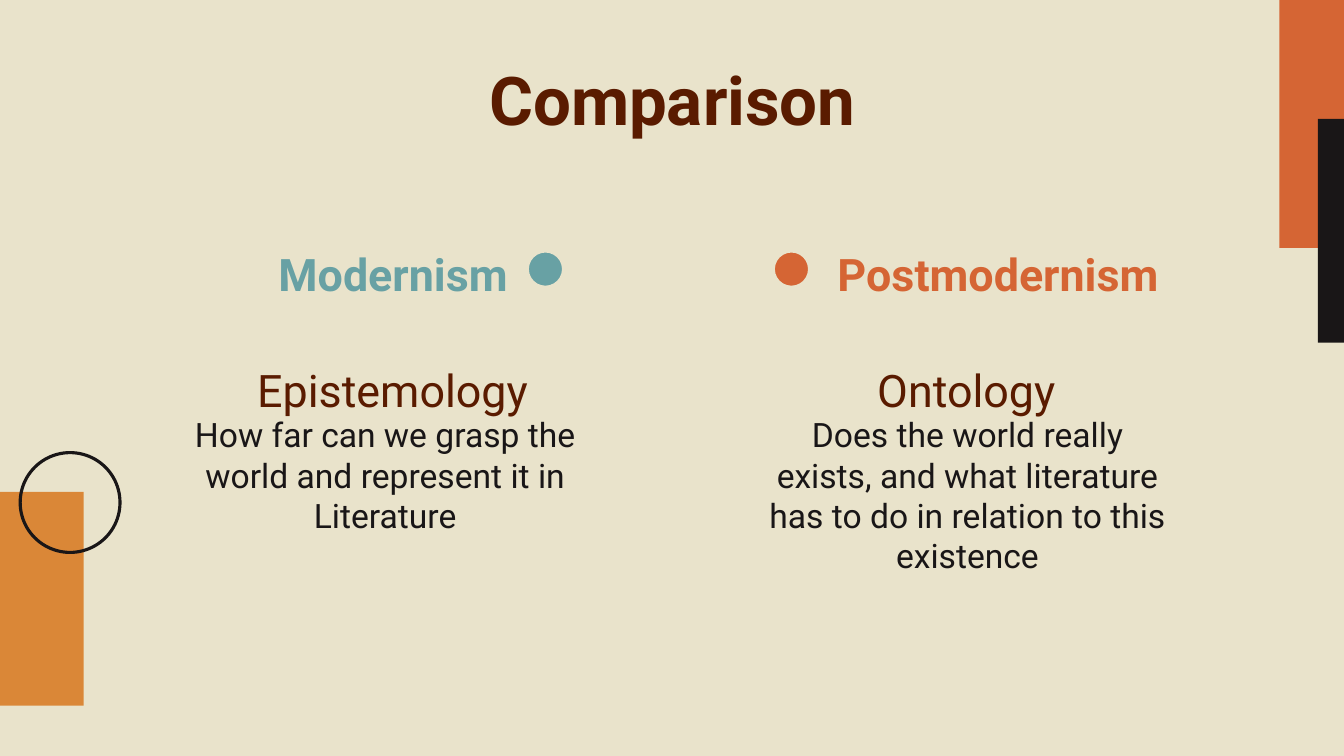
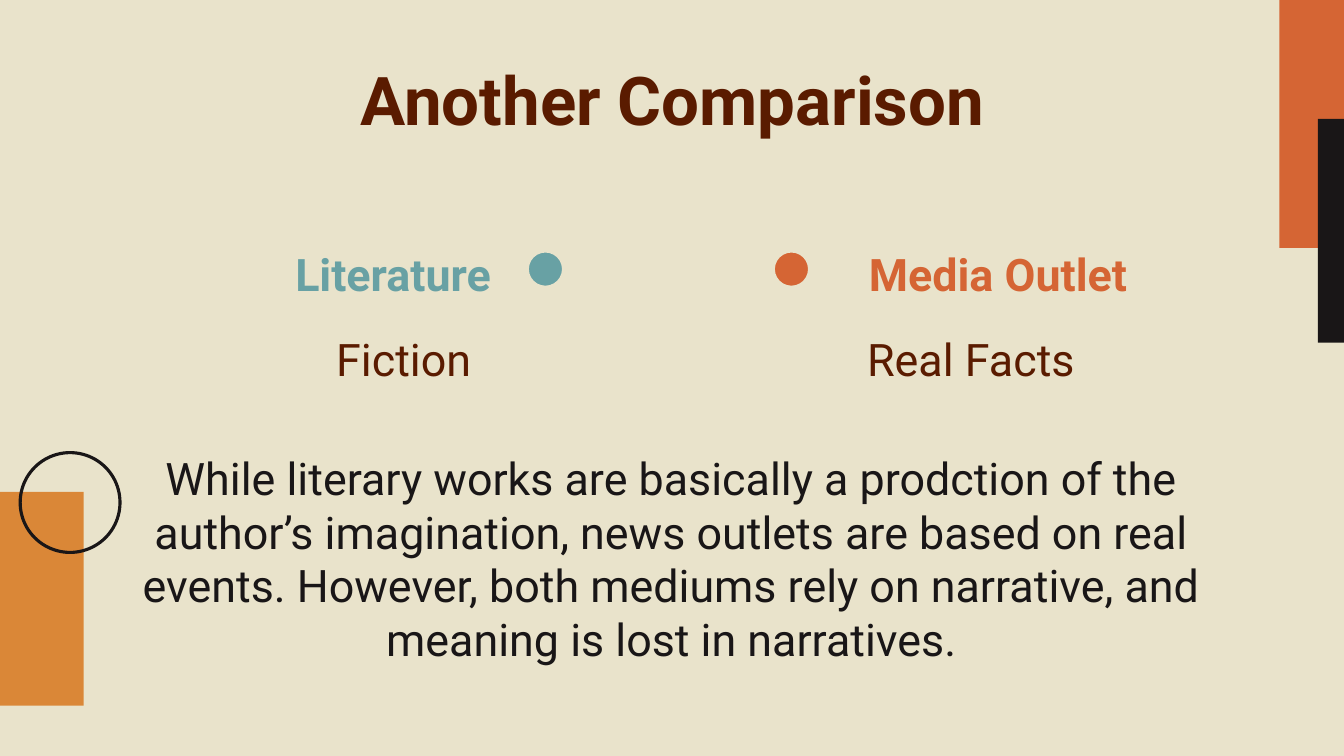
import pptx
import pptx.util
import pptx.dml.color
import pptx.enum.shapes
import pptx.enum.text

RGB = pptx.dml.color.RGBColor
Pt = pptx.util.Pt
SHAPE = pptx.enum.shapes.MSO_SHAPE
ANCHOR = pptx.enum.text.MSO_ANCHOR

# Style: lengths in px, 100 px to the inch
SCALE = 9144
WIDE, HIGH = 1333, 750
FONT = "Roboto"
CREAM = RGB(0xE9, 0xE3, 0xCB)
BROWN = RGB(0x5A, 0x1B, 0x00)
INK = RGB(0x19, 0x16, 0x17)
TEAL = RGB(0x68, 0xA1, 0xA4)
RUST = RGB(0xD5, 0x65, 0x34)
AMBER = RGB(0xDA, 0x87, 0x37)


def px(*nums):
    return [pptx.util.Emu(num * SCALE) for num in nums]


def write(shape, text, size=32, color=INK, bold=False, space=None,
          anchor=ANCHOR.TOP):
    """Put one centred paragraph into a shape."""
    frame = shape.text_frame
    frame.word_wrap = True
    frame.auto_size = pptx.enum.text.MSO_AUTO_SIZE.NONE
    frame.vertical_anchor = anchor
    (frame.margin_left, frame.margin_top,
     frame.margin_right, frame.margin_bottom) = px(13, 13, 13, 13)
    para = frame.paragraphs[0]
    para.alignment = pptx.enum.text.PP_ALIGN.CENTER
    para.line_spacing = space
    run = para.add_run()
    run.text = text
    font = run.font
    font.name, font.size, font.bold = FONT, Pt(size), bold
    font.color.rgb = color


class Deck:
    def __init__(self):
        self.prs = pptx.Presentation()
        self.prs.slide_width, self.prs.slide_height = px(WIDE, HIGH)
        fill = self.prs.slide_master.background.fill
        fill.solid()
        fill.fore_color.rgb = CREAM
        self.slide = None

    def shape(self, kind, box, fill=None, line=None):
        item = self.slide.shapes.add_shape(kind, *px(*box))
        item.shadow.inherit = False
        if fill is None:
            item.fill.background()
        else:
            item.fill.solid()
            item.fill.fore_color.rgb = fill
        if line is None:
            item.line.fill.background()
        else:
            item.line.color.rgb = line
            item.line.width = Pt(2.25)

    def text(self, box, text, **style):
        write(self.slide.shapes.add_textbox(*px(*box)), text, **style)

    def term(self, box, text):
        self.text(box, text, color=BROWN, space=1.15)

    def decor(self):
        self.shape(SHAPE.RECTANGLE, (1269, 0, WIDE - 1269, 246), RUST)
        self.shape(SHAPE.RECTANGLE, (1307, 118, WIDE - 1307, 222), INK)
        self.shape(SHAPE.RECTANGLE, (0, 488, 83, 212), AMBER)
        self.shape(SHAPE.OVAL, (20, 449, 99, 99), line=INK)

    def heads(self, left, right):
        """Two coloured headings, each beside a dot."""
        for name, color, dot, start, width in (
                (left, TEAL, 523, 250, 280),
                (right, RUST, 767, 804, 372)):
            self.shape(SHAPE.OVAL, (dot, 249, 36, 36), color, CREAM)
            self.text((start, 238, width, 59), name, color=color, bold=True,
                      space=1.15, anchor=ANCHOR.MIDDLE)

    def page(self, title, left, right):
        self.slide = self.prs.slides.add_slide(self.prs.slide_layouts[5])
        self.decor()
        head = self.slide.shapes.title
        head.left, head.top, head.width, head.height = px(172, 45, 990, 107)
        write(head, title, size=48, color=BROWN, bold=True)
        self.heads(left, right)


def main():
    deck = Deck()

    # Modernism against postmodernism
    deck.page("Comparison", "Modernism", "Postmodernism")
    deck.text((172, 398, 420, 103),
              "How far can we grasp the world and represent it in Literature",
              size=24)
    deck.term((231, 339, 317, 59), "Epistemology")
    deck.text((742, 398, 435, 99),
              "Does the world really exists, and what literature has to do "
              "in relation to this existence", size=24)
    deck.term((846, 339, 225, 59), "Ontology")

    # Literature against media
    deck.page("Another Comparison", "Literature", "Media Outlet")
    deck.term((242, 308, 317, 59), "Fiction")
    deck.term((839, 308, 248, 59), "Real Facts")
    deck.text((105, 434, 1122, 304),
              "While literary works are basically a prodction of the author’s "
              "imagination, news outlets are based on real events. However, "
              "both mediums rely on narrative, and meaning is lost in "
              "narratives.")

    deck.prs.save("out.pptx")


if __name__ == "__main__":
    main()
